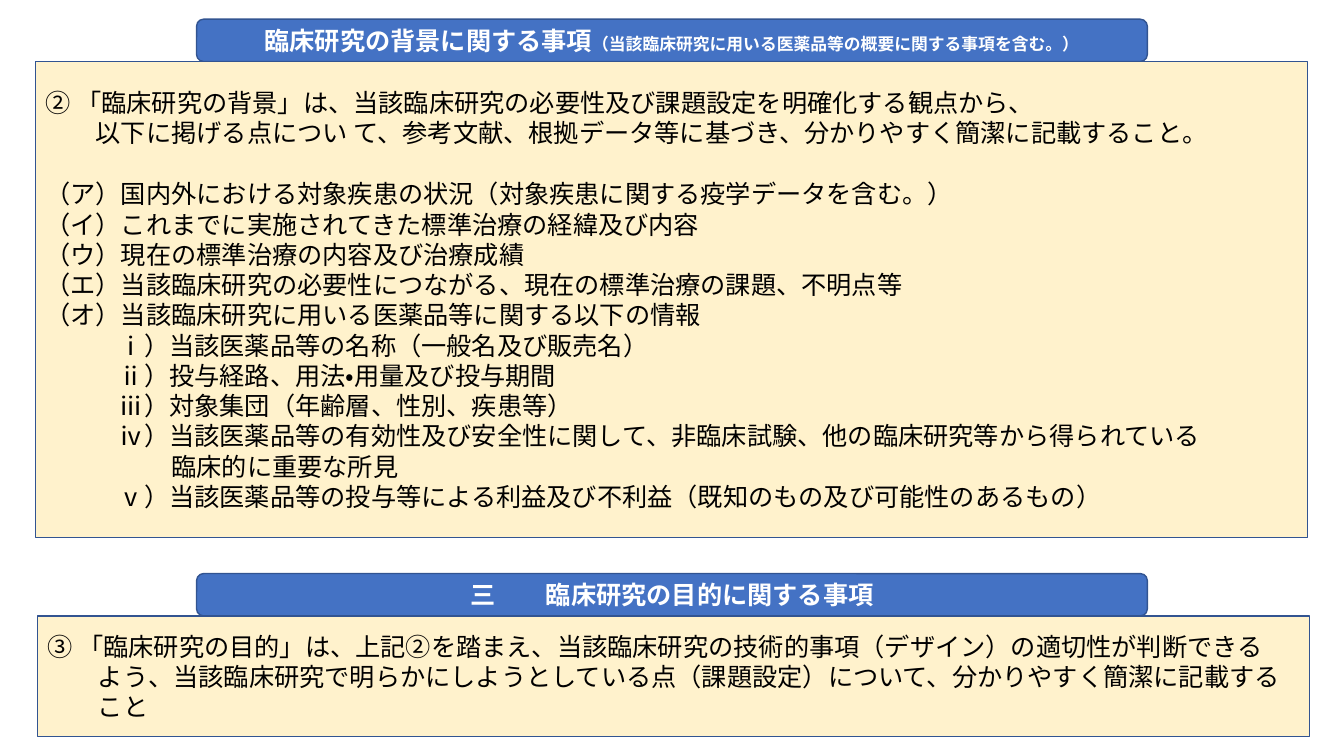
from pptx import Presentation
from pptx.dml.color import RGBColor
from pptx.enum.lang import MSO_LANGUAGE_ID
from pptx.enum.shapes import MSO_SHAPE
from pptx.enum.text import MSO_ANCHOR, MSO_AUTO_SIZE, PP_ALIGN
from pptx.util import Pt
from lxml import etree

JAPANESE = MSO_LANGUAGE_ID.JAPANESE
ROUNDED = MSO_SHAPE.ROUNDED_RECTANGLE
MIDDLE = MSO_ANCHOR.MIDDLE
NO_FIT = MSO_AUTO_SIZE.NONE
LEFT, CENTER = PP_ALIGN.LEFT, PP_ALIGN.CENTER

PX = 9144
COLORS = {"bar": "4472C4", "panel": "FFF2CC", "edge": "325491",
          "heading": "FFFFFF", "body": "000000"}
DRAWING = "{http://schemas.openxmlformats.org/drawingml/2006/main}"
TWO_CONTENT = 3
CONTINUED, ROMAN, ROMAN_CONTINUED = 50, 73, 125

BACKGROUND_POINTS = [
    ("② 「臨床研究の背景」は、当該臨床研究の必要性及び課題設定を明確化する観点から、", 0, 0),
    ("以下に掲げる点につい て、参考文献、根拠データ等に基づき、分かりやすく簡潔に記載すること。", CONTINUED, 0),
    ("（ア）国内外における対象疾患の状況（対象疾患に関する疫学データを含む。）", 0, 22),
    ("（イ）これまでに実施されてきた標準治療の経緯及び内容", 0, 0),
    ("（ウ）現在の標準治療の内容及び治療成績", 0, 0),
    ("（エ）当該臨床研究の必要性につながる、現在の標準治療の課題、不明点等", 0, 0),
    ("（オ）当該臨床研究に用いる医薬品等に関する以下の情報", 0, 0),
    ("ⅰ）当該医薬品等の名称（一般名及び販売名）", ROMAN, 0),
    ("ⅱ）投与経路、用法・用量及び投与期間", ROMAN, 0),
    ("ⅲ）対象集団（年齢層、性別、疾患等）", ROMAN, 0),
    ("ⅳ）当該医薬品等の有効性及び安全性に関して、非臨床試験、他の臨床研究等から得られている", ROMAN, 0),
    ("臨床的に重要な所見", ROMAN_CONTINUED, 0),
    ("ⅴ）当該医薬品等の投与等による利益及び不利益（既知のもの及び可能性のあるもの）", ROMAN, 0),
]
PURPOSE_POINTS = [
    ("③ 「臨床研究の目的」は、上記②を踏まえ、当該臨床研究の技術的事項（デザイン）の適切性が判断できる", 0, 0),
    ("よう、当該臨床研究で明らかにしようとしている点（課題設定）について、分かりやすく簡潔に記載する", CONTINUED, 0),
    ("こと", CONTINUED, 0),
]


class GuidelineSlide:
    """Holds the guideline style and the slide being filled."""

    def __init__(self, deck):
        self.slide = deck.slides.add_slide(deck.slide_layouts[TWO_CONTENT])

    def place(self, shape, box):
        shape.left, shape.top, shape.width, shape.height = (n * PX for n in box)
        frame = shape.text_frame
        frame.word_wrap = True
        frame.auto_size = NO_FIT
        frame.vertical_anchor = MIDDLE
        return frame

    def paint(self, shape, fill):
        shape.fill.solid()
        shape.fill.fore_color.rgb = RGBColor.from_string(COLORS[fill])
        shape.line.color.rgb = RGBColor.from_string(COLORS["edge"])
        shape.line.width = Pt(1)

    def style(self, paragraph, color, bold, align):
        paragraph.alignment = align
        font = paragraph.font
        font.name = "Calibri"
        font.size = Pt(18)
        font.bold = bold
        font.language_id = JAPANESE
        font.color.rgb = RGBColor.from_string(COLORS[color])

    def bar(self, box):
        bar = self.slide.shapes.add_shape(ROUNDED, *(n * PX for n in box))
        bar.shadow.inherit = False
        self.paint(bar, "bar")
        return bar

    def heading(self, shape, box, parts):
        paragraph = self.place(shape, box).paragraphs[0]
        self.style(paragraph, "heading", True, CENTER)
        runs = []
        for part in parts:
            run = paragraph.add_run()
            run.text = part
            runs.append(run)
        return runs

    def panel(self, index, box, points):
        body = self.slide.placeholders[index]
        frame = self.place(body, box)
        self.paint(body, "panel")
        for number, (text, indent, gap) in enumerate(points):
            paragraph = frame.add_paragraph() if number else frame.paragraphs[0]
            paragraph.text = text
            paragraph.space_before = Pt(gap)
            self.style(paragraph, "body", False, LEFT)
            properties = paragraph.font._element.getparent()
            properties.set("marL", str(indent * PX))
            properties.set("indent", "0")
            paragraph.font._element.addprevious(etree.Element(DRAWING + "buNone"))


def main():
    deck = Presentation()
    deck.slide_width, deck.slide_height = 1333 * PX, 750 * PX
    guideline = GuidelineSlide(deck)

    background_box = (195, 19, 943, 42)
    background_bar = guideline.bar(background_box)
    title = guideline.slide.shapes.title
    title._element.addprevious(background_bar._element)
    _, scope = guideline.heading(title, background_box, [
        "臨床研究の背景に関する事項",
        "（当該臨床研究に用いる医薬品等の概要に関する事項を含む。）"])
    scope.font.size = Pt(12)
    guideline.panel(1, (35, 61, 1262, 472), BACKGROUND_POINTS)

    purpose_box = (195, 569, 943, 42)
    section_number, _ = guideline.heading(
        guideline.bar(purpose_box), purpose_box,
        ["三", "臨床研究の目的に関する事項"])
    section_number.font._element.set("spc", "3600")
    guideline.panel(2, (37, 611, 1262, 120), PURPOSE_POINTS)

    deck.save("out.pptx")


if __name__ == "__main__":
    main()
